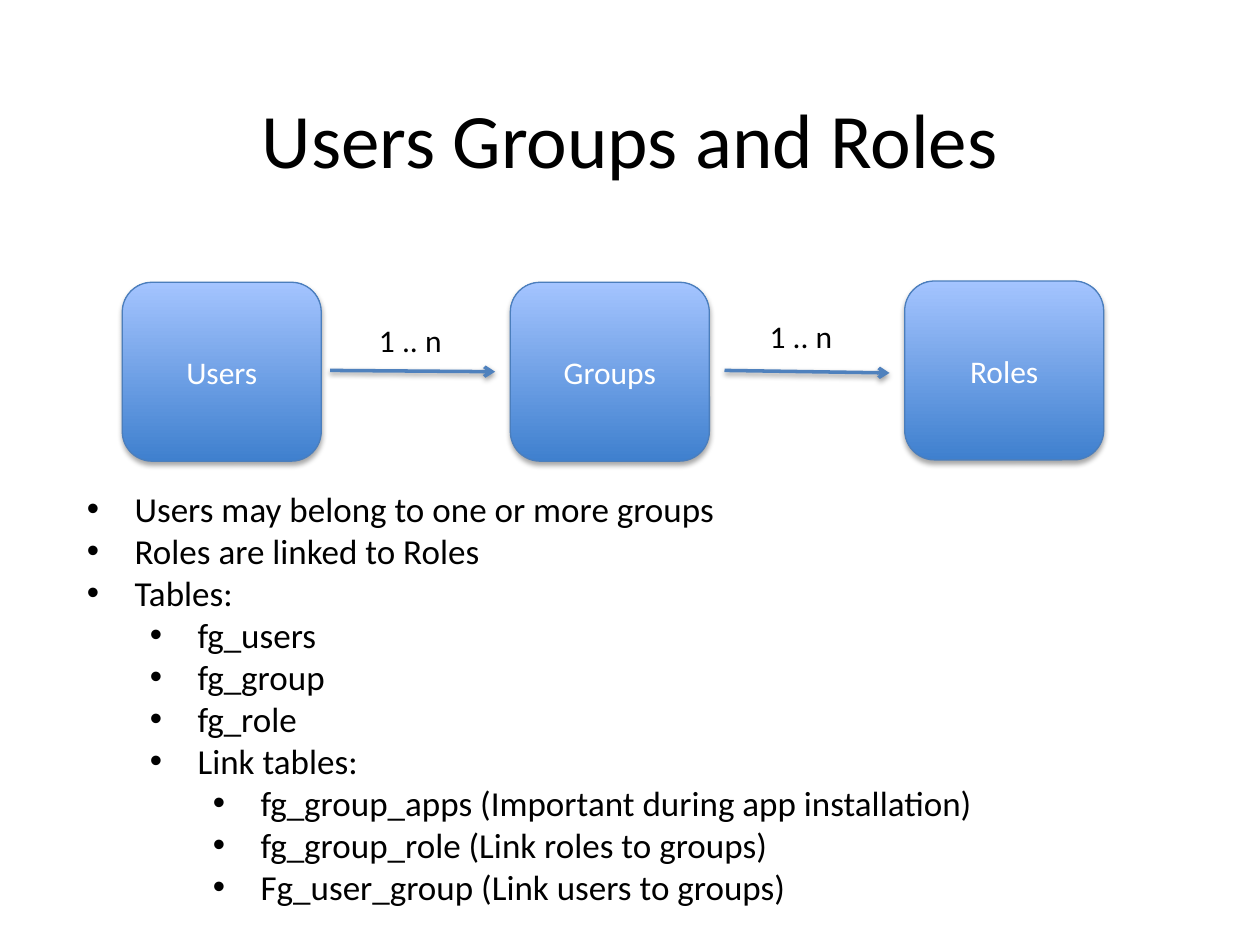
import pptx
import pptx.dml.color
import pptx.enum.shapes
import pptx.enum.text
import pptx.oxml
import pptx.oxml.ns
import pptx.util
from pptx.util import Inches

RGBColor = pptx.dml.color.RGBColor
ALIGN = pptx.enum.text.PP_ALIGN
ANCHOR = pptx.enum.text.MSO_ANCHOR
AUTO_SIZE = pptx.enum.text.MSO_AUTO_SIZE

BLACK = RGBColor(0x00, 0x00, 0x00)
WHITE = RGBColor(0xFF, 0xFF, 0xFF)
DEEP_BLUE = RGBColor(0x3F, 0x80, 0xCE)
PALE_BLUE = RGBColor(0xA4, 0xC4, 0xFF)
EDGE_BLUE = RGBColor(0x4B, 0x7E, 0xBC)
ARROW_BLUE = RGBColor(0x4F, 0x81, 0xBD)

ENTITIES = [("Users", 0.97, 2.24), ("Groups", 4.05, 2.24), ("Roles", 7.18, 2.23)]
ARROWS = [(2.62, 2.94, 3.93, 2.95), (5.75, 2.94, 7.06, 2.96)]
CARDINALITIES = [(2.91, 2.5), (6.01, 2.47)]
NOTES = [
    (0, "Users may belong to one or more groups"),
    (0, "Roles are linked to Roles"),
    (0, "Tables:"),
    (1, "fg_users"),
    (1, "fg_group"),
    (1, "fg_role"),
    (1, "Link tables:"),
    (2, "fg_group_apps (Important during app installation)"),
    (2, "fg_group_role (Link roles to groups)"),
    (2, "Fg_user_group (Link users to groups)"),
]


def add_xml(parent, tag, **attributes):
    child = pptx.oxml.parse_xml(f"<a:{tag} {pptx.oxml.ns.nsdecls('a')}/>")
    for name, value in attributes.items():
        child.set(name, str(value))
    parent.append(child)
    return child


class SlideBuilder:
    font = "Calibri"

    def __init__(self, slide):
        self.slide = slide

    def add_span(self, para, text, size, color):
        span = para.add_run()
        span.text = text
        span.font.name = self.font
        span.font.size = pptx.util.Pt(size)
        span.font.color.rgb = color

    def drop_shadow(self, effects, distance, opacity):
        """Fill an effect list with a soft shadow falling straight down."""
        shadow = add_xml(
            effects, "outerShdw", blurRad=pptx.util.Pt(3.1),
            dist=pptx.util.Pt(distance), dir=5400000, rotWithShape=0,
        )
        color = add_xml(shadow, "srgbClr", val=BLACK)
        add_xml(color, "alpha", val=opacity * 1000)

    def text_box(self, left, top, width, height, wrap=True, grow=True):
        box = self.slide.shapes.add_textbox(
            Inches(left), Inches(top), Inches(width), Inches(height))
        frame = box.text_frame
        frame.word_wrap = wrap
        frame.auto_size = AUTO_SIZE.SHAPE_TO_FIT_TEXT if grow else AUTO_SIZE.NONE
        return frame

    def title(self, text):
        frame = self.text_box(0.69, 0.37, 8.62, 1.45, grow=False)
        frame.vertical_anchor = ANCHOR.MIDDLE
        para = frame.paragraphs[0]
        para.alignment = ALIGN.CENTER
        self.add_span(para, text, 44, BLACK)

    def entity(self, text, left, top):
        box = self.slide.shapes.add_shape(
            pptx.enum.shapes.MSO_SHAPE.ROUNDED_RECTANGLE,
            Inches(left), Inches(top), Inches(1.58), Inches(1.42))
        box.fill.gradient()
        box.fill.gradient_angle = 90
        for stop, color in zip(box.fill.gradient_stops, (DEEP_BLUE, PALE_BLUE)):
            stop.color.rgb = color
        box.line.color.rgb = EDGE_BLUE
        box.line.width = pptx.util.Pt(0.75)
        box.shadow.inherit = False
        effects = box.element.spPr.find(pptx.oxml.ns.qn("a:effectLst"))
        self.drop_shadow(effects, 1.8, 35)
        box.text_frame.vertical_anchor = ANCHOR.MIDDLE
        para = box.text_frame.paragraphs[0]
        para.alignment = ALIGN.CENTER
        self.add_span(para, text, 18, WHITE)

    def arrow(self, *ends):
        line = self.slide.shapes.add_connector(
            pptx.enum.shapes.MSO_CONNECTOR.STRAIGHT, *map(Inches, ends))
        line.line.color.rgb = ARROW_BLUE
        line.line.width = pptx.util.Pt(2)
        outline = line.element.spPr.find(pptx.oxml.ns.qn("a:ln"))
        add_xml(outline, "tailEnd", type="arrow")
        effects = add_xml(line.element.spPr, "effectLst")
        self.drop_shadow(effects, 1.6, 38)

    def label(self, text, left, top):
        frame = self.text_box(left, top, 0.7, 0.4, wrap=False)
        self.add_span(frame.paragraphs[0], text, 18, BLACK)

    def bullets(self, items):
        frame = self.text_box(0.59, 3.82, 8.78, 3.47)
        for index, (level, text) in enumerate(items):
            para = frame.add_paragraph() if index else frame.paragraphs[0]
            para.level = level
            properties = para._p.get_or_add_pPr()
            properties.set("marL", str(Inches(0.38 + 0.5 * level)))
            properties.set("indent", str(Inches(-0.38)))
            add_xml(properties, "buFont", typeface="Arial")
            add_xml(properties, "buChar", char="•")
            self.add_span(para, text, 20, BLACK)


def main():
    deck = pptx.Presentation()
    deck.slide_width = Inches(10)
    deck.slide_height = Inches(7.5)
    page = SlideBuilder(deck.slides.add_slide(deck.slide_layouts[6]))

    page.title("Users Groups and Roles")
    for name, left, top in ENTITIES:
        page.entity(name, left, top)
    for ends in ARROWS:
        page.arrow(*ends)
    for left, top in CARDINALITIES:
        page.label("1 .. n", left, top)
    page.bullets(NOTES)

    deck.save("out.pptx")


if __name__ == "__main__":
    main()
